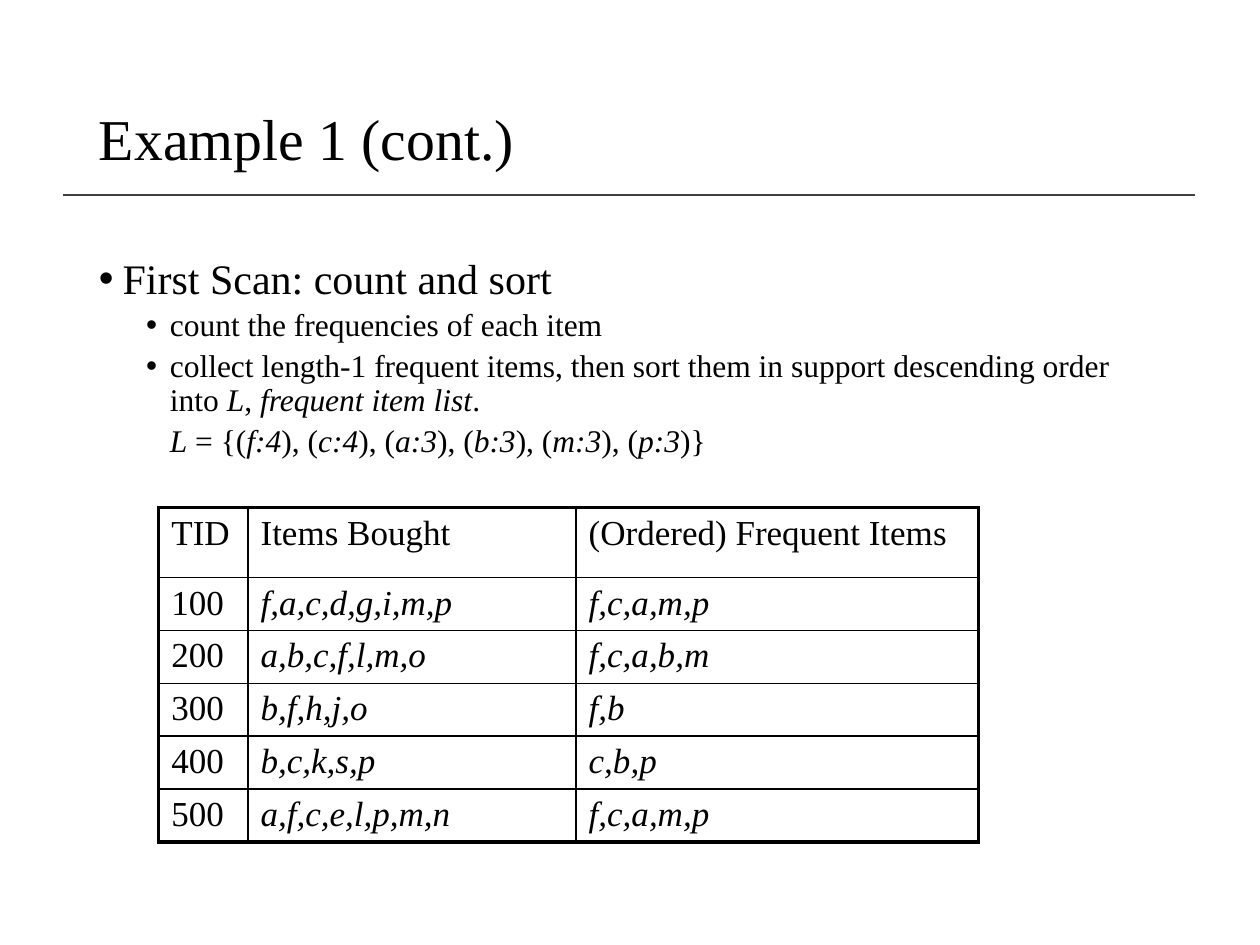
from dataclasses import dataclass

from lxml import etree
from pptx import Presentation
from pptx.dml.color import RGBColor
from pptx.enum.shapes import MSO_CONNECTOR
from pptx.enum.text import MSO_ANCHOR
from pptx.oxml.ns import qn
from pptx.util import Pt

STRAIGHT = MSO_CONNECTOR.STRAIGHT
MIDDLE = MSO_ANCHOR.MIDDLE
TOP = MSO_ANCHOR.TOP


@dataclass(frozen=True)
class Theme:
    font: str = "Times New Roman"
    ink: str = "000000"
    rule: str = "404040"
    title: float = 33
    heading: float = 24
    detail: float = 18
    table: float = 20
    thin: float = 1
    thick: float = 2.25


THEME = Theme()

TITLE = "Example 1 (cont.)"

# Each paragraph: level, bulleted, text pieces that alternate upright and italic
BODY = [
    (0, True, ["First Scan: count and sort"]),
    (1, True, ["count the frequencies of each item"]),
    (1, True, ["collect length-1 frequent items, then sort them in support "
               "descending order into ", "L", ", ", "frequent item list", "."]),
    (1, False, ["", "L", " = {(", "f:4", "), (", "c:4", "), (", "a:3", "), (",
                "b:3", "), (", "m:3", "), (", "p:3", ")}"]),
]
# Size, left margin and space before, by level
LEVELS = [(THEME.heading, 13.5, 7.5), (THEME.detail, 40.5, 3.75)]
HANGING = 13.5

TRANSACTIONS = [
    ("TID", "Items Bought", "(Ordered) Frequent Items"),
    ("100", "f,a,c,d,g,i,m,p", "f,c,a,m,p"),
    ("200", "a,b,c,f,l,m,o", "f,c,a,b,m"),
    ("300", "b,f,h,j,o", "f,b"),
    ("400", "b,c,k,s,p", "c,b,p"),
    ("500", "a,f,c,e,l,p,m,n", "f,c,a,m,p"),
]
COLUMN_WIDTHS = [51, 187.5, 230]
HEADER_HEIGHT, ROW_HEIGHT = 40, 29.4


def set_font(font, size):
    font.name = THEME.font
    font.size = Pt(size)
    font.color.rgb = RGBColor.from_string(THEME.ink)


def add_text_frame(slide, left, top, width, height, anchor):
    frame = slide.shapes.add_textbox(
        Pt(left), Pt(top), Pt(width), Pt(height)).text_frame
    frame.word_wrap = True
    frame.vertical_anchor = anchor
    return frame


def add_title(slide):
    frame = add_text_frame(slide, 49.5, 28.75, 621, 104.5, MIDDLE)
    paragraph = frame.paragraphs[0]
    paragraph.text = TITLE
    paragraph.line_spacing = 0.9
    set_font(paragraph.font, THEME.title)


def add_rule(slide):
    line = slide.shapes.add_connector(
        STRAIGHT, Pt(36), Pt(111.5), Pt(683), Pt(111.5))
    line.line.color.rgb = RGBColor.from_string(THEME.rule)
    line.line.width = Pt(THEME.thin)
    etree.SubElement(line.element.spPr, qn("a:effectLst"))


def add_bullet(properties):
    properties.set("indent", str(Pt(-HANGING)))
    etree.SubElement(properties, qn("a:buFont"), typeface="Arial")
    etree.SubElement(properties, qn("a:buChar"), char="•")


def add_body(slide):
    frame = add_text_frame(slide, 49.5, 143.75, 621, 342.5, TOP)
    for index, (level, bulleted, pieces) in enumerate(BODY):
        paragraph = frame.add_paragraph() if index else frame.paragraphs[0]
        size, margin, space_before = LEVELS[level]
        paragraph.level = level
        paragraph.line_spacing = 0.9
        paragraph.space_before = Pt(space_before)
        properties = paragraph._p.get_or_add_pPr()
        properties.set("marL", str(Pt(margin)))
        if bulleted:
            add_bullet(properties)
        set_font(paragraph.font, size)
        for position, piece in enumerate(pieces):
            if piece:
                run = paragraph.add_run()
                run.text = piece
                run.font.italic = position % 2 == 1


def set_borders(cell, outer_sides):
    """Draw all four borders, thick on the sides that lie on the table's edge."""
    properties = cell._tc.get_or_add_tcPr()
    for position, side in enumerate(("L", "R", "T", "B")):
        width = THEME.thick if side in outer_sides else THEME.thin
        border = etree.Element(qn(f"a:ln{side}"), w=str(Pt(width)))
        fill = etree.SubElement(border, qn("a:solidFill"))
        etree.SubElement(fill, qn("a:srgbClr"), val=THEME.ink)
        properties.insert(position, border)


def add_transactions(slide):
    row_heights = [HEADER_HEIGHT] + [ROW_HEIGHT] * (len(TRANSACTIONS) - 1)
    table = slide.shapes.add_table(
        len(row_heights), len(COLUMN_WIDTHS), Pt(90.75), Pt(290),
        Pt(sum(COLUMN_WIDTHS)), Pt(sum(row_heights))).table
    table.first_row = table.horz_banding = False
    for column, width in zip(table.columns, COLUMN_WIDTHS):
        column.width = Pt(width)
    last_row, last_column = len(row_heights) - 1, len(COLUMN_WIDTHS) - 1
    for row, values in enumerate(TRANSACTIONS):
        table.rows[row].height = Pt(row_heights[row])
        for column, value in enumerate(values):
            cell = table.cell(row, column)
            cell.margin_top, cell.margin_bottom = Pt(3.6), Pt(2.6)
            cell.fill.background()
            paragraph = cell.text_frame.paragraphs[0]
            paragraph.text = value
            set_font(paragraph.font, THEME.table)
            paragraph.font.italic = row > 0 and column > 0
            edges = {"L": column == 0, "R": column == last_column,
                     "T": row == 0, "B": row == last_row}
            set_borders(cell, [side for side, outer in edges.items() if outer])


def main():
    presentation = Presentation()
    presentation.slide_width, presentation.slide_height = Pt(720), Pt(540)
    slide = presentation.slides.add_slide(presentation.slide_layouts[6])
    add_rule(slide)
    add_title(slide)
    add_body(slide)
    add_transactions(slide)
    presentation.save("out.pptx")


if __name__ == "__main__":
    main()
